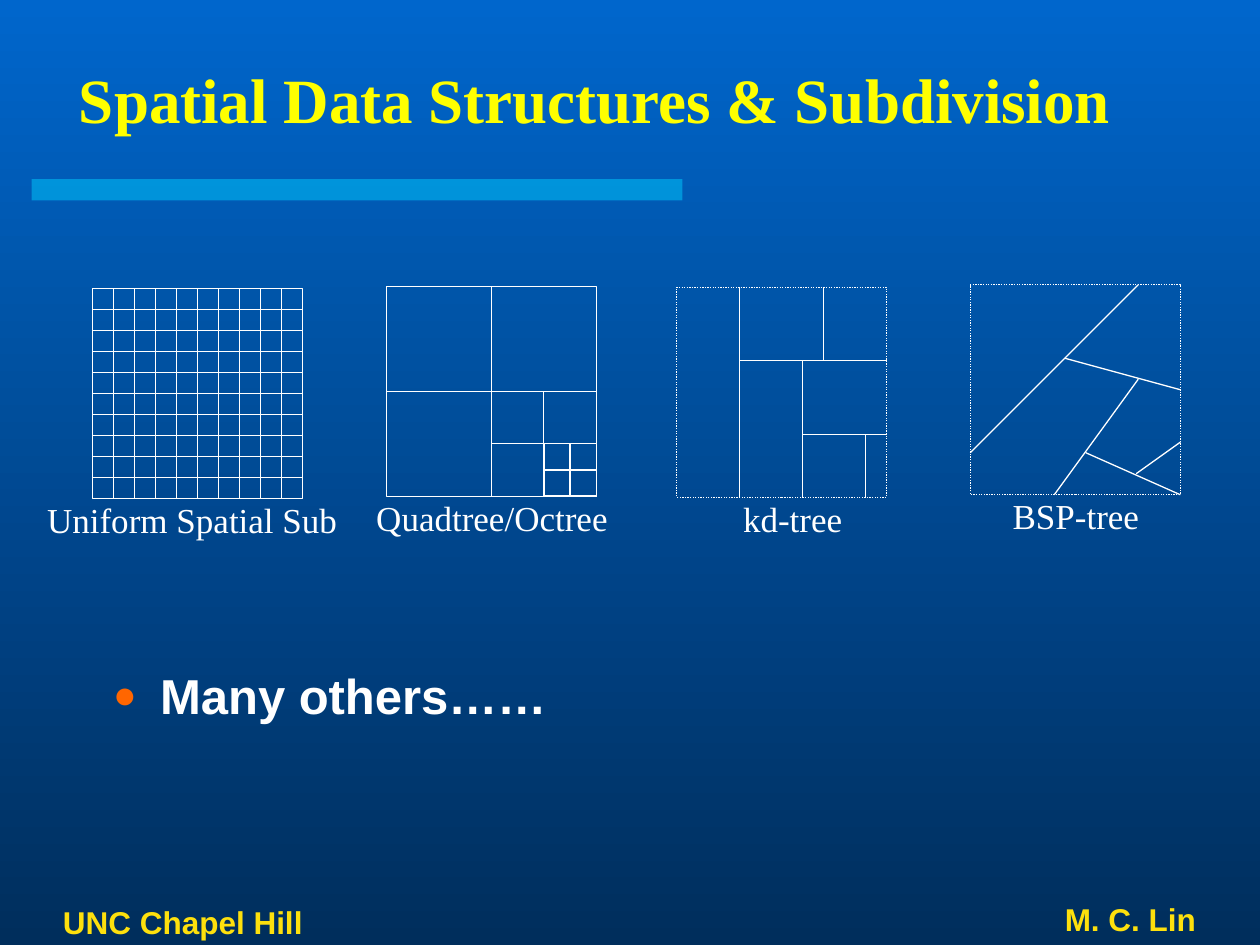
from lxml.etree import SubElement
from pptx import Presentation
from pptx.dml.color import RGBColor
from pptx.enum.dml import MSO_LINE
from pptx.enum.shapes import MSO_CONNECTOR, MSO_SHAPE
from pptx.enum.text import MSO_ANCHOR, PP_ALIGN
from pptx.oxml.ns import qn
from pptx.util import Cm, Pt


def color(value):
    return RGBColor.from_string(value)


def add_text(box, words, font, size, ink, bold, align, anchor):
    left, top, width, height = box
    frame = slide.shapes.add_textbox(Cm(left), Cm(top), Cm(width), Cm(height)).text_frame
    frame.word_wrap = True
    frame.vertical_anchor = anchor
    paragraph = frame.paragraphs[0]
    paragraph.alignment = align
    run = paragraph.add_run()
    run.text = words
    run.font.name = font
    run.font.size = Pt(size)
    run.font.bold = bold
    run.font.color.rgb = color(ink)
    return paragraph


presentation = Presentation()
presentation.slide_width = Cm(25.4)
presentation.slide_height = Cm(19.05)
slide = presentation.slides.add_slide(presentation.slide_layouts[6])

backdrop = slide.background.fill
backdrop.gradient()
backdrop.gradient_angle = 270
for stop, shade, position in zip(backdrop.gradient_stops, ("0066CC", "002E5C"), (0, 1)):
    stop.color.rgb = color(shade)
    stop.position = position

accent = slide.shapes.add_shape(MSO_SHAPE.RECTANGLE, Cm(0.64), Cm(3.61), Cm(13.12), Cm(0.43))
accent.shadow.inherit = False
accent.line.fill.background()
accent.fill.solid()
accent.fill.fore_color.rgb = color("00CCFF")
accent_color = accent.fill._xPr.find(qn("a:solidFill"))[0]
SubElement(accent_color, qn("a:alpha"), val="50000")

add_text((1.02, 18.14, 6, 0.91), "UNC Chapel Hill", "Arial", 18, "FDE00D", True,
         PP_ALIGN.LEFT, MSO_ANCHOR.MIDDLE)
add_text((13.26, 18.01, 11.1, 1.04), "M. C. Lin", "Arial", 18, "FDE00D", True,
         PP_ALIGN.RIGHT, MSO_ANCHOR.MIDDLE)
add_text((0.74, 0.81, 22.5, 2.36), "Spatial Data Structures & Subdivision", "Times New Roman",
         36, "FFFF00", True, PP_ALIGN.CENTER, MSO_ANCHOR.MIDDLE)
others = add_text((2.03, 13.3, 21.59, 4.1), "Many others……", "Arial", 28, "FFFFFF", True,
                  PP_ALIGN.LEFT, MSO_ANCHOR.TOP)
indent = others._p.get_or_add_pPr()
indent.set("marL", str(Cm(0.95)))
indent.set("indent", str(Cm(-0.95)))
SubElement(SubElement(indent, qn("a:buClr")), qn("a:srgbClr"), val="FF6600")
SubElement(indent, qn("a:buSzPct"), val="80000")
SubElement(indent, qn("a:buFont"), typeface="Arial")
SubElement(indent, qn("a:buChar"), char="●")

# Squares are (x, y, side) and cuts are (x1, y1, x2, y2), in tenths of a diagram's side.
tenth = 0.4233
grid_cuts = [(i, 0, i, 10) for i in range(1, 10)] + [(0, i, 10, i) for i in range(1, 10)]
quad_squares = [(0, 0, 5), (5, 5, 5), (5, 5, 2.5), (7.5, 7.5, 2.5)]
quad_cuts = [(8.75, 7.5, 8.75, 10), (7.5, 8.75, 10, 8.75)]
kd_cuts = [(3, 0, 3, 10), (3, 3.5, 10, 3.5), (7, 3.5, 7, 0),
           (6, 3.5, 6, 10), (6, 7, 10, 7), (9, 7, 9, 10)]
bsp_cuts = [(0, 8, 8, 0), (4.5, 3.5, 10, 5), (8, 4.5, 4, 10),
            (10, 10, 5.5, 8), (7.9, 9, 10, 7.5)]
diagrams = [
    ("Uniform Spatial Sub", 1.86, 5.82, 0.38, 6.99, None, [], grid_cuts),
    ("Quadtree/Octree", 7.79, 5.77, 7.19, 5.46, None, quad_squares, quad_cuts),
    ("kd-tree", 13.64, 5.79, 13.44, 5.08, MSO_LINE.ROUND_DOT, [], kd_cuts),
    ("BSP-tree", 19.56, 5.74, 19.15, 5.08, MSO_LINE.ROUND_DOT, [], bsp_cuts),
]

for caption, left, top, caption_left, caption_width, dash, squares, cuts in diagrams:
    for x, y, side in [(0, 0, 10)] + squares:
        cell = slide.shapes.add_shape(MSO_SHAPE.RECTANGLE, Cm(left + x * tenth),
                                      Cm(top + y * tenth), Cm(side * tenth), Cm(side * tenth))
        cell.shadow.inherit = False
        cell.fill.background()
        cell.line.color.rgb = color("FFFFFF")
        cell.line.width = Pt(0.75)
        if dash:
            cell.line.dash_style = dash
    for x1, y1, x2, y2 in cuts:
        cut = slide.shapes.add_connector(MSO_CONNECTOR.STRAIGHT,
                                         Cm(left + x1 * tenth), Cm(top + y1 * tenth),
                                         Cm(left + x2 * tenth), Cm(top + y2 * tenth))
        cut.line.color.rgb = color("FFFFFF")
        cut.line.width = Pt(0.75)
        SubElement(cut._element.spPr, qn("a:effectLst"))
    add_text((caption_left, top + 4.11, caption_width, 1.09), caption, "Times New Roman", 20,
             "FFFFFF", False, PP_ALIGN.CENTER, MSO_ANCHOR.TOP)

presentation.save("out.pptx")
